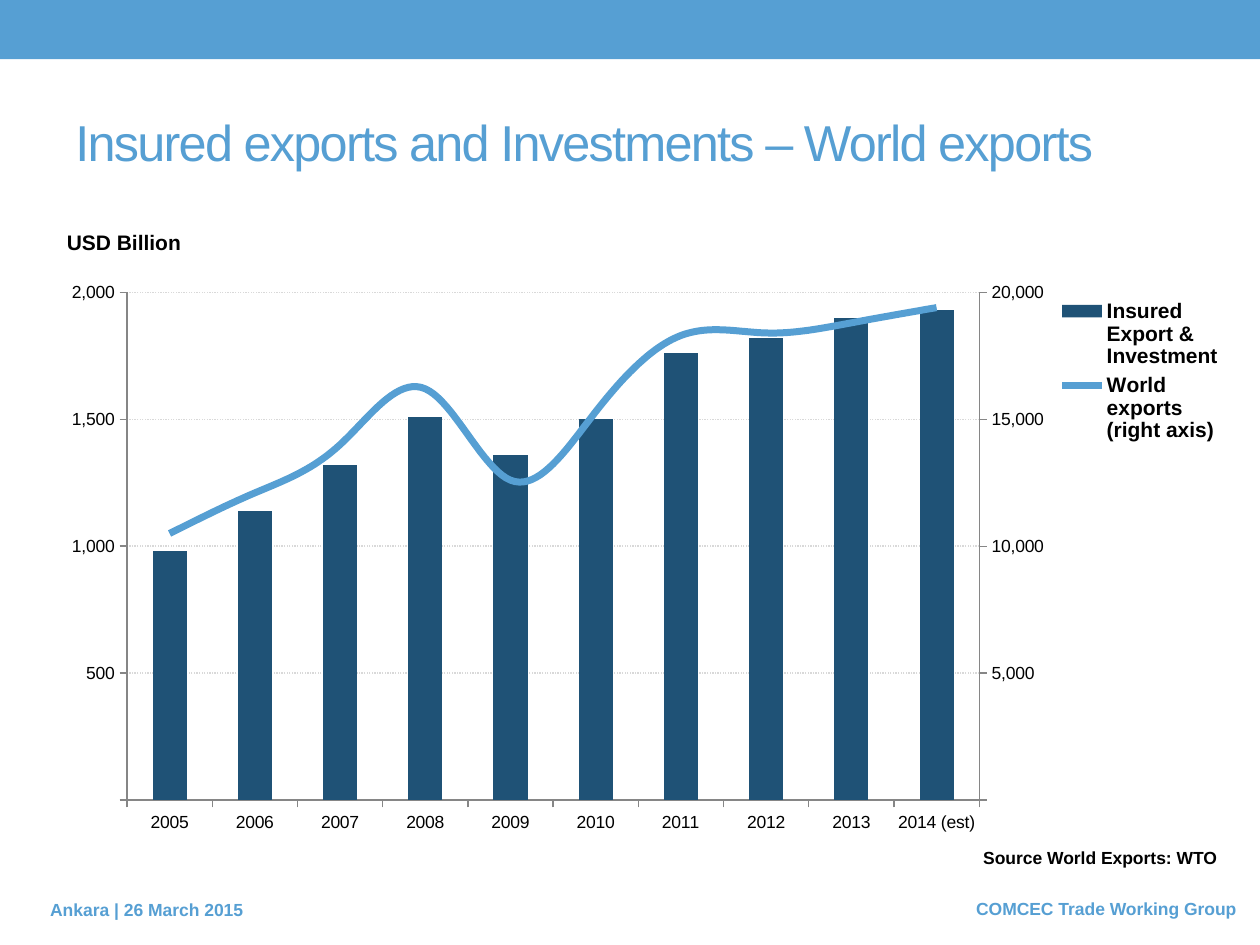
from copy import deepcopy
from dataclasses import dataclass

from pptx import Presentation
from pptx.chart.data import CategoryChartData
from pptx.dml.color import RGBColor
from pptx.enum.chart import XL_CHART_TYPE, XL_LEGEND_POSITION, XL_MARKER_STYLE, XL_TICK_MARK
from pptx.enum.dml import MSO_LINE
from pptx.enum.shapes import MSO_SHAPE
from pptx.enum.text import MSO_ANCHOR, PP_ALIGN
from pptx.oxml import parse_xml
from pptx.oxml.ns import nsdecls, qn
from pptx.util import Inches, Pt


@dataclass(frozen=True)
class Theme:
    font: str = "Arial"
    sky: RGBColor = RGBColor(0x56, 0x9F, 0xD3)
    navy: RGBColor = RGBColor(0x1F, 0x52, 0x76)
    black: RGBColor = RGBColor(0, 0, 0)
    grid: RGBColor = RGBColor(0xD9, 0xD9, 0xD9)
    axis: RGBColor = RGBColor(0x86, 0x86, 0x86)
    title: float = 28.8
    legend: float = 12
    small: float = 10


THEME = Theme()
TITLE = "Insured exports and Investments – World exports"
AXIS_TITLE = "USD Billion"
NOTES = [
    ("Ankara | 26 March 2015", (0.3, 7.04, 3.17, 0.36), THEME.sky, PP_ALIGN.LEFT),
    ("COMCEC Trade Working Group", (4.16, 7.03, 5.75, 0.36), THEME.sky, PP_ALIGN.RIGHT),
    ("Source World Exports: WTO", (7.69, 6.67, 2.08, 0.27), THEME.black, PP_ALIGN.CENTER),
]
YEARS = [str(year) for year in range(2005, 2014)] + ["2014 (est)"]
INSURED = [980, 1140, 1320, 1510, 1360, 1500, 1760, 1820, 1900, 1930]
WORLD = [10500, 12100, 14000, 16200, 12600, 15300, 18300, 18400, 18800, 19400]
SERIES = [("Insured Export & Investment", INSURED), ("World exports (right axis)", WORLD)]
LEFT_MAX, LEFT_STEP = 2000000, 500000
RIGHT_MAX, RIGHT_STEP = 20000000, 5000000


def style_font(font, size, color, bold=False):
    font.name, font.size, font.bold = THEME.font, Pt(size), bold
    font.color.rgb = color


def add_text(page, text, place, size, color, align=PP_ALIGN.LEFT, bold=False, wrap=True):
    box = page.shapes.add_textbox(*map(Inches, place))
    frame = box.text_frame
    frame.text = text
    frame.word_wrap = wrap
    frame.vertical_anchor = MSO_ANCHOR.MIDDLE
    para = frame.paragraphs[0]
    para.alignment = align
    span = para.runs[0]
    style_font(span.font, size, color, bold)
    return span


def remove_children(parent, *tags):
    for tag in tags:
        for child in parent.findall(qn(tag)):
            parent.remove(child)


def set_layout(parent, index, x, y, w=None, h=None, inner=False):
    remove_children(parent, "c:layout")
    parts = '<c:layoutTarget val="inner"/>' if inner else ""
    parts += '<c:xMode val="edge"/><c:yMode val="edge"/>'
    sizes = [("x", x), ("y", y), ("w", w), ("h", h)]
    parts += "".join(f'<c:{key} val="{value}"/>' for key, value in sizes if value is not None)
    parent.insert(index, parse_xml(
        f'<c:layout {nsdecls("c")}><c:manualLayout>{parts}</c:manualLayout></c:layout>'))


def style_axis(axis):
    axis.major_tick_mark = XL_TICK_MARK.OUTSIDE
    axis.minor_tick_mark = XL_TICK_MARK.NONE
    style_font(axis.tick_labels.font, THEME.small, THEME.black)
    axis.format.line.color.rgb = THEME.axis
    axis.format.line.width = Pt(0.75)


def add_right_axis(chart):
    bars = chart.plots[0]._element
    lines = parse_xml(
        f'<c:lineChart {nsdecls("c")}><c:grouping val="standard"/><c:varyColors val="0"/>'
        '<c:marker val="1"/><c:axId val="5001"/><c:axId val="5002"/></c:lineChart>')
    world = bars.findall(qn("c:ser"))[1]
    remove_children(world, "c:invertIfNegative")
    lines.insert(2, world)
    bars.addnext(lines)

    values = deepcopy(chart.value_axis._element)
    years = deepcopy(chart.category_axis._element)
    remove_children(values, "c:title", "c:majorGridlines")
    changes = [
        (values, {"axId": 5002, "crossAx": 5001, "axPos": "r", "crosses": "max",
                  "majorUnit": RIGHT_STEP, "scaling/c:max": RIGHT_MAX}),
        (years, {"axId": 5001, "crossAx": 5002, "delete": 1}),
    ]
    for axis, settings in changes:
        for tag, value in settings.items():
            axis.xpath(f"c:{tag}")[0].set("val", str(value))
    chart.value_axis._element.addnext(values)
    values.addnext(years)


def add_export_chart(page):
    data = CategoryChartData()
    data.categories = YEARS
    for name, thousands in SERIES:
        data.add_series(name, [value * 1000 for value in thousands])
    place = map(Inches, (0.5, 1.74, 9.24, 4.92))
    chart = page.shapes.add_chart(XL_CHART_TYPE.COLUMN_STACKED, *place, data).chart
    style_font(chart.font, THEME.legend, THEME.black)
    chart.has_title = False

    style_axis(chart.category_axis)
    axis = chart.value_axis
    style_axis(axis)
    axis.minimum_scale, axis.maximum_scale, axis.major_unit = 0, LEFT_MAX, LEFT_STEP
    axis.tick_labels.number_format = "#,###,"
    axis.tick_labels.number_format_is_linked = False
    grid = axis.major_gridlines.format.line
    grid.color.rgb, grid.width, grid.dash_style = THEME.grid, Pt(0.75), MSO_LINE.ROUND_DOT
    frame = axis.axis_title.text_frame
    frame.text = AXIS_TITLE
    style_font(frame.paragraphs[0].runs[0].font, THEME.legend, THEME.black, True)
    title = axis._element.find(qn("c:title"))
    body = title.xpath(".//a:bodyPr")[0]
    body.set("rot", "0")
    body.set("vert", "horz")
    set_layout(title, 1, 0.0, 0.01)

    add_right_axis(chart)
    bars, lines = chart.plots
    bars.gap_width, bars.overlap, bars.vary_by_categories = 150, 100, False
    insured, world = bars.series[0], lines.series[0]
    insured.format.fill.solid()
    insured.format.fill.fore_color.rgb = THEME.navy
    world.format.line.color.rgb = THEME.sky
    world.format.line.width = Pt(4)
    world.marker.style = XL_MARKER_STYLE.NONE
    world.smooth = True

    chart.has_legend = True
    legend = chart.legend
    legend.position = XL_LEGEND_POSITION.CORNER
    legend.include_in_layout = False
    style_font(legend.font, THEME.legend, THEME.black, True)
    set_layout(legend._element, 1, 0.85, 0.12, 0.15, 0.25)
    set_layout(bars._element.getparent(), 0, 0.055, 0.118, 0.732, 0.819, inner=True)


def main():
    deck = Presentation()
    deck.slide_width, deck.slide_height = Inches(10), Inches(7.5)
    page = deck.slides.add_slide(deck.slide_layouts[6])
    band = page.shapes.add_shape(MSO_SHAPE.RECTANGLE, 0, 0, deck.slide_width, Inches(0.47))
    band.shadow.inherit = False
    band.fill.solid()
    band.fill.fore_color.rgb = THEME.sky
    band.line.fill.background()
    heading = add_text(page, TITLE, (0.5, 0.58, 9, 1.08), THEME.title, THEME.sky)
    heading.font._element.set("spc", "-100")
    add_export_chart(page)
    for text, place, color, align in NOTES:
        add_text(page, text, place, THEME.small, color, align, bold=True,
                 wrap=align != PP_ALIGN.CENTER)
    deck.save("out.pptx")


if __name__ == "__main__":
    main()
